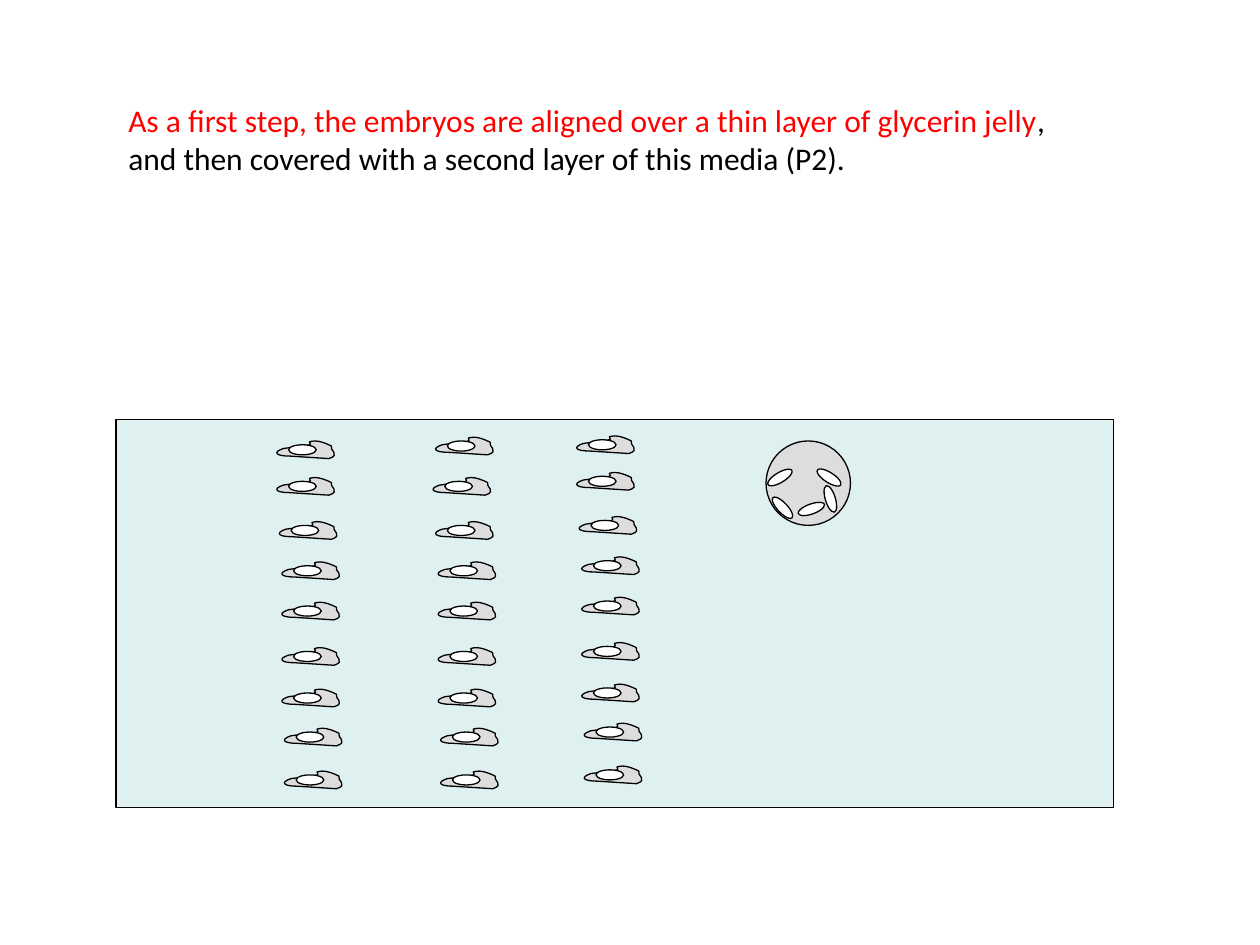
from pptx import Presentation
from pptx.dml.color import RGBColor
from pptx.enum.shapes import MSO_SHAPE as Preset
from pptx.oxml import parse_xml
from pptx.oxml.ns import nsdecls, qn
from pptx.util import Inches, Pt

COLORS = {"jelly": "BBE0E3", "tissue": "DDDDDD", "white": "FFFFFF",
          "black": "000000", "accent": "FF0000"}

# Embryo outline in hundredths of an inch: a start, then three points a curve
EMBRYO_START = (47, 4)
EMBRYO_CURVES = [
    (43, 2), (38, 0), (34, 0),
    (23, 1), (37, 2), (26, 4),
    (21, 5), (15, 5), (9, 6),
    (0, 9), (3, 12), (14, 12),
    (29, 13), (30, 13), (45, 14),
    (55, 11), (45, 7), (47, 4),
]

# Offsets from the tray's corner: each column's left, first top and the
# shift of its other rows; then the rows' common tops and sideways drift
COLUMNS = [(1.24, 0.17, 0, 0), (2.48, 0.14, 0.02, 0), (3.62, 0.13, 0, -0.04)]
ROW_TOPS = [0.46, 0.81, 1.13, 1.45, 1.81, 2.14, 2.45, 2.79]
ROW_DRIFTS = [0, 0.02, 0.04, 0.04, 0.04, 0.04, 0.06, 0.06]

# Embryos in the dish: left, top, rotation
DISH_EMBRYOS = [(0.39, 0.25, 32.5), (0, 0.25, 329.1), (0.02, 0.49, 46.8),
                (0.25, 0.5, 340.4), (0.4, 0.42, 72.9)]


def color(name):
    return RGBColor.from_string(COLORS[name])


def paint(shape, fill):
    shape.shadow.inherit = False
    shape.fill.solid()
    shape.fill.fore_color.rgb = color(fill)
    shape.line.color.rgb = color("black")
    shape.line.width = Pt(0.75)


def add_preset(shapes, preset, left, top, width, height, fill):
    shape = shapes.add_shape(preset, Inches(left), Inches(top),
                             Inches(width), Inches(height))
    paint(shape, fill)
    return shape


def add_oval(shapes, left, top, rotation=0):
    oval = add_preset(shapes, Preset.OVAL, left, top, 0.22, 0.08, "white")
    oval.rotation = rotation


def curve_outline(shape):
    """Turn each three line segments of a freeform into one Bezier curve."""
    segments = list(shape.element.iter(qn("a:lnTo")))
    for first in range(0, len(segments), 3):
        curve = parse_xml(f"<a:cubicBezTo {nsdecls('a')}/>")
        segments[first].addprevious(curve)
        for segment in segments[first:first + 3]:
            curve.append(segment[0])
            segment.getparent().remove(segment)


def add_embryo(shapes, left, top):
    builder = shapes.build_freeform(*EMBRYO_START, scale=Inches(0.01))
    builder.add_line_segments(EMBRYO_CURVES, close=True)
    body = builder.convert_to_shape(Inches(left), Inches(top))
    curve_outline(body)
    paint(body, "tissue")
    add_oval(shapes, left + 0.13, top + 0.03)


def add_dish(shapes, left, top, size):
    add_preset(shapes, Preset.OVAL, left, top, size, size, "tissue")
    for dx, dy, rotation in DISH_EMBRYOS:
        add_oval(shapes, left + dx, top + dy, rotation)


def add_tray(page, left, top, width, height):
    tray = add_preset(page.shapes, Preset.RECTANGLE, left, top, width, height,
                      "jelly")
    tint = tray.fill._xPr.find(qn("a:solidFill"))[0]
    tint.append(parse_xml(f'<a:alpha {nsdecls("a")} val="47000"/>'))
    for column_left, first_top, first_shift, row_shift in COLUMNS:
        column = page.shapes.add_group_shape()
        x = left + column_left
        add_embryo(column.shapes, x + first_shift, top + first_top)
        for row_top, drift in zip(ROW_TOPS, ROW_DRIFTS):
            add_embryo(column.shapes, x + drift, top + row_top + row_shift)
    add_dish(page.shapes, left + 5.16, top + 0.17, 0.67)


def add_caption(page, left, top, width, height):
    box = page.shapes.add_textbox(Inches(left), Inches(top),
                                  Inches(width), Inches(height))
    box.text_frame.word_wrap = True
    para = box.text_frame.paragraphs[0]
    para.font.name = "Calibri"
    para.font.size = Pt(18)
    for text, shade in [
        ("As a first step, the embryos are aligned over a thin layer of "
         "glycerin jelly", "accent"),
        (", and then covered with a second layer of this media (P2).", "black"),
    ]:
        span = para.add_run()
        span.text = text
        span.font.color.rgb = color(shade)


def main():
    deck = Presentation()
    deck.slide_width, deck.slide_height = Inches(10), Inches(7.5)
    page = deck.slides.add_slide(deck.slide_layouts[6])
    add_tray(page, 0.92, 3.33, 7.92, 3.08)
    add_caption(page, 0.92, 0.75, 7.5, 0.71)
    deck.save("out.pptx")


if __name__ == "__main__":
    main()
